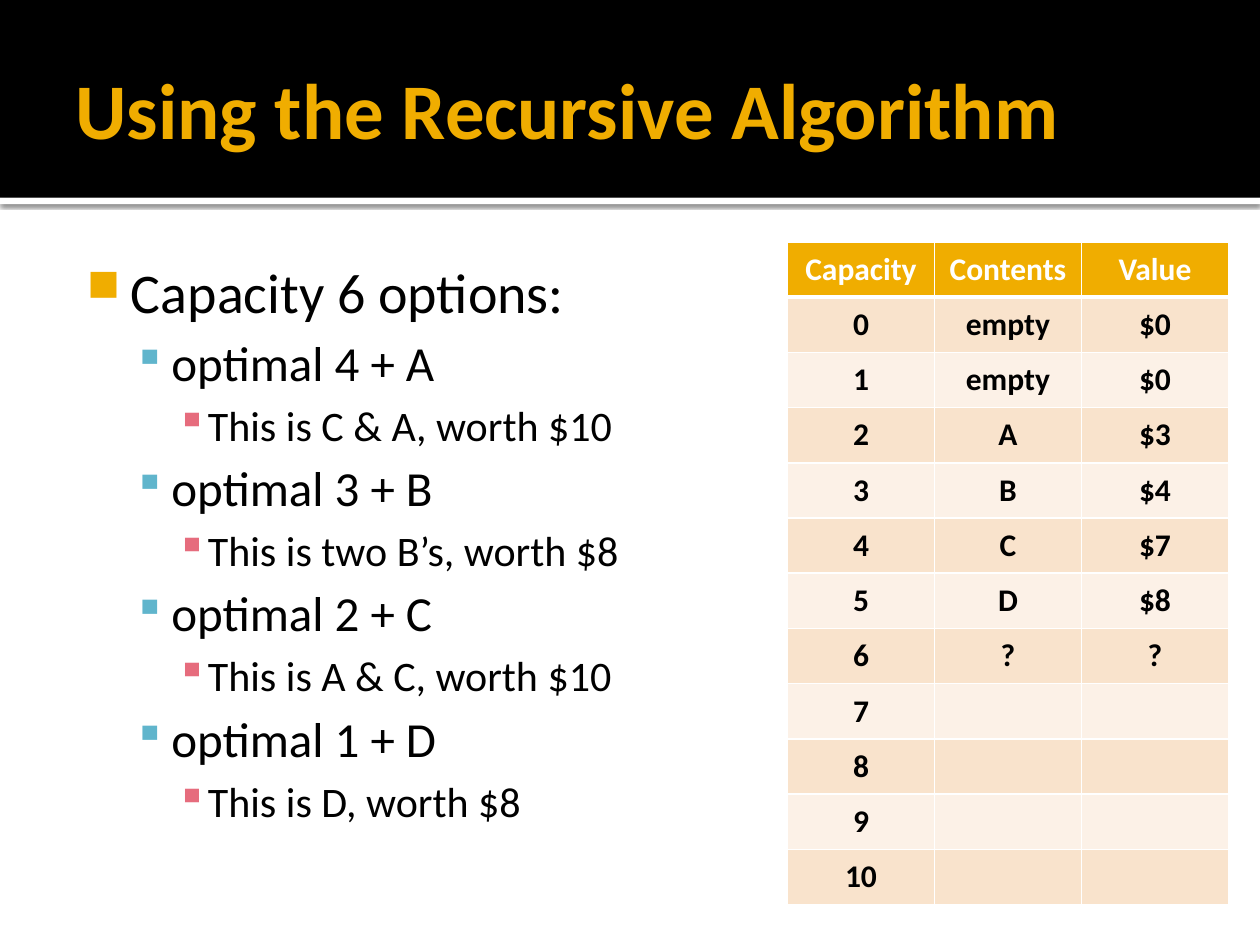
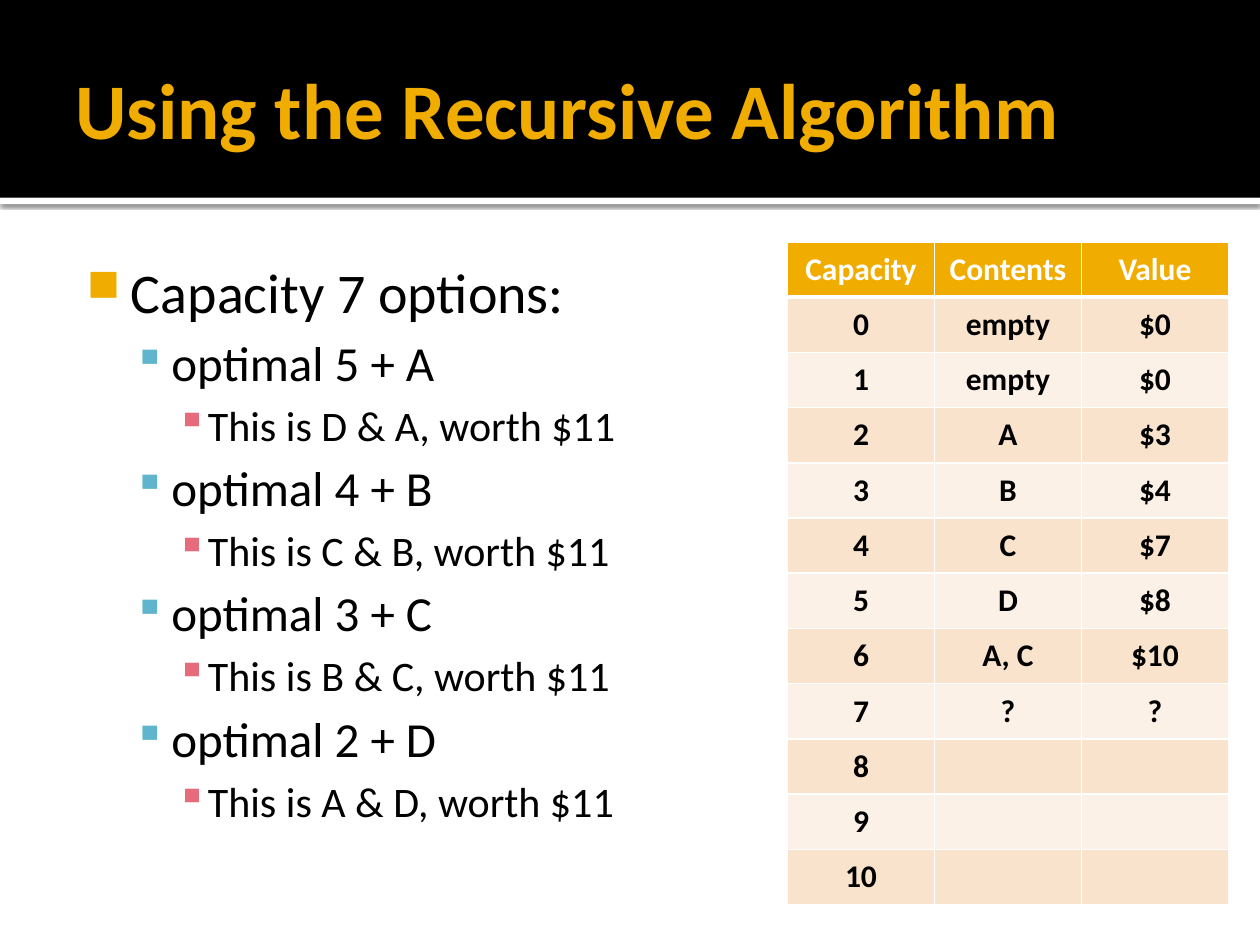
from lxml import etree
from pptx import Presentation
from pptx.dml.color import RGBColor
from pptx.enum.shapes import MSO_SHAPE
from pptx.enum.text import MSO_ANCHOR, MSO_AUTO_SIZE, PP_ALIGN
from pptx.oxml import parse_xml
from pptx.oxml.ns import nsdecls, qn
from pptx.util import Inches, Pt

# Content
TITLE = "Using the Recursive Algorithm"
HEADINGS = ("Capacity", "Contents", "Value")
MAX_CAPACITY = 10
SOLVED = [("empty", "$0"), ("empty", "$0"), ("A", "$3"),
          ("B", "$4"), ("C", "$7"), ("D", "$8")]
UNKNOWN = ("?", "?")
PAGES = [
    {"heading": "Capacity 6 options:",
     "options": [("optimal 4 + A", "This is C & A, worth $10"),
                 ("optimal 3 + B", "This is two B’s, worth $8"),
                 ("optimal 2 + C", "This is A & C, worth $10"),
                 ("optimal 1 + D", "This is D, worth $8")],
     "known": SOLVED + [UNKNOWN]},
    {"heading": "Capacity 7 options:",
     "options": [("optimal 5 + A", "This is D & A, worth $11"),
                 ("optimal 4 + B", "This is C & B, worth $11"),
                 ("optimal 3 + C", "This is B & C, worth $11"),
                 ("optimal 2 + D", "This is A & D, worth $11")],
     "known": SOLVED + [("A, C", "$10"), UNKNOWN]},
]

# Shared style
FONT = "Calibri"
GOLD, BLACK, WHITE = "F0AD00", "000000", "FFFFFF"
ROW_FILLS = ("F9E3CC", "FCF1E7")
BAND_HEIGHT = 1.57
# Each level: size, left edge, hang, bullet, bullet colour, bullet percent, space before
LEVELS = [(32, 0.48, 0.35, "■", GOLD, 80, 0),
          (28, 0.8, 0.3, "▪", "60B5CC", 90, 4.6),
          (24, 1.09, 0.25, "▪", "E66C7D", 100, 4.6)]


def colour(value):
    return RGBColor.from_string(value)


def add_span(para, text, size, text_colour, bold=False):
    span = para.add_run()
    span.text = text
    span.font.name = FONT
    span.font.size = Pt(size)
    span.font.bold = bold
    span.font.color.rgb = colour(text_colour)


def set_frame(frame, anchor, insets):
    frame.word_wrap = True
    frame.auto_size = MSO_AUTO_SIZE.NONE
    frame.vertical_anchor = anchor
    (frame.margin_left, frame.margin_top,
     frame.margin_right, frame.margin_bottom) = map(Inches, insets)


def add_band(page, top, height, fill):
    band = page.shapes.add_shape(MSO_SHAPE.RECTANGLE, 0, Inches(top),
                                 Inches(10), Inches(height))
    band.fill.solid()
    band.fill.fore_color.rgb = colour(fill)
    band.line.fill.background()
    band.shadow.inherit = False
    page.shapes.title.element.addprevious(band.element)
    return band


def add_header(page):
    # White rule with a soft shadow, then the black band
    rule = add_band(page, BAND_HEIGHT, 0.05, WHITE)
    effects = rule.element.spPr.find(qn("a:effectLst"))
    effects.append(parse_xml(
        f'<a:outerShdw {nsdecls("a")} blurRad="{Pt(2.5)}" dist="{Pt(0.8)}" '
        f'dir="5400000" rotWithShape="0"><a:srgbClr val="{BLACK}">'
        '<a:alpha val="60000"/></a:srgbClr></a:outerShdw>'))
    add_band(page, 0, BAND_HEIGHT, BLACK)

    title = page.shapes.title
    title.left, title.top = Inches(0.5), Inches(0.17)
    title.width, title.height = Inches(9), Inches(1.37)
    set_frame(title.text_frame, MSO_ANCHOR.MIDDLE, (0.1, 0.05, 0.05, 0.05))
    para = title.text_frame.paragraphs[0]
    para.alignment = PP_ALIGN.LEFT
    add_span(para, TITLE, 45, GOLD, bold=True)


def add_bullet(para, text, level):
    size, left, hang, mark, mark_colour, percent, before = LEVELS[level]
    para.level = level
    if before:
        para.space_before = Pt(before)
    props = para._p.get_or_add_pPr()
    props.set("marL", str(Inches(left)))
    props.set("indent", str(-Inches(hang)))
    bullet_colour = etree.SubElement(props, qn("a:buClr"))
    etree.SubElement(bullet_colour, qn("a:srgbClr"), val=mark_colour)
    etree.SubElement(props, qn("a:buSzPct"), val=str(percent * 1000))
    etree.SubElement(props, qn("a:buChar"), char=mark)
    add_span(para, text, size, BLACK)


def add_options(page, heading, options):
    box = page.shapes.add_textbox(Inches(0.5), Inches(1.94), Inches(5.67), Inches(5.06))
    frame = box.text_frame
    set_frame(frame, MSO_ANCHOR.TOP, (0.06, 0.1, 0.1, 0.05))
    add_bullet(frame.paragraphs[0], heading, 0)
    for option in options:
        for level, text in enumerate(option, start=1):
            add_bullet(frame.add_paragraph(), text, level)


def set_borders(cell, bottom_width):
    props = cell._tc.get_or_add_tcPr()
    for index, side in enumerate(("lnL", "lnR", "lnT", "lnB")):
        width = bottom_width if side == "lnB" else 1
        props.insert(index, parse_xml(
            f'<a:{side} {nsdecls("a")} w="{Pt(width)}"><a:solidFill>'
            f'<a:srgbClr val="{WHITE}"/></a:solidFill></a:{side}>'))


def add_capacity_table(page, known):
    blanks = [("", "")] * (MAX_CAPACITY + 1 - len(known))
    rows = [HEADINGS] + [(str(capacity), *result)
                         for capacity, result in enumerate(known + blanks)]
    table = page.shapes.add_table(len(rows), len(HEADINGS), Inches(6.25), Inches(1.92),
                                  Inches(3.5), Inches(5.26)).table
    for row_index, row in enumerate(rows):
        is_header = row_index == 0
        fill = GOLD if is_header else ROW_FILLS[(row_index - 1) % 2]
        for column_index, text in enumerate(row):
            cell = table.cell(row_index, column_index)
            cell.vertical_anchor = MSO_ANCHOR.MIDDLE
            cell.fill.solid()
            cell.fill.fore_color.rgb = colour(fill)
            set_borders(cell, 3 if is_header else 1)
            if text:
                para = cell.text_frame.paragraphs[0]
                para.alignment = PP_ALIGN.CENTER
                add_span(para, text, 18, WHITE if is_header else BLACK, bold=True)


def main():
    deck = Presentation()
    deck.slide_width, deck.slide_height = Inches(10), Inches(7.5)
    for content in PAGES:
        page = deck.slides.add_slide(deck.slide_layouts[5])
        add_header(page)
        add_options(page, content["heading"], content["options"])
        add_capacity_table(page, content["known"])
    deck.save("out.pptx")


if __name__ == "__main__":
    main()
